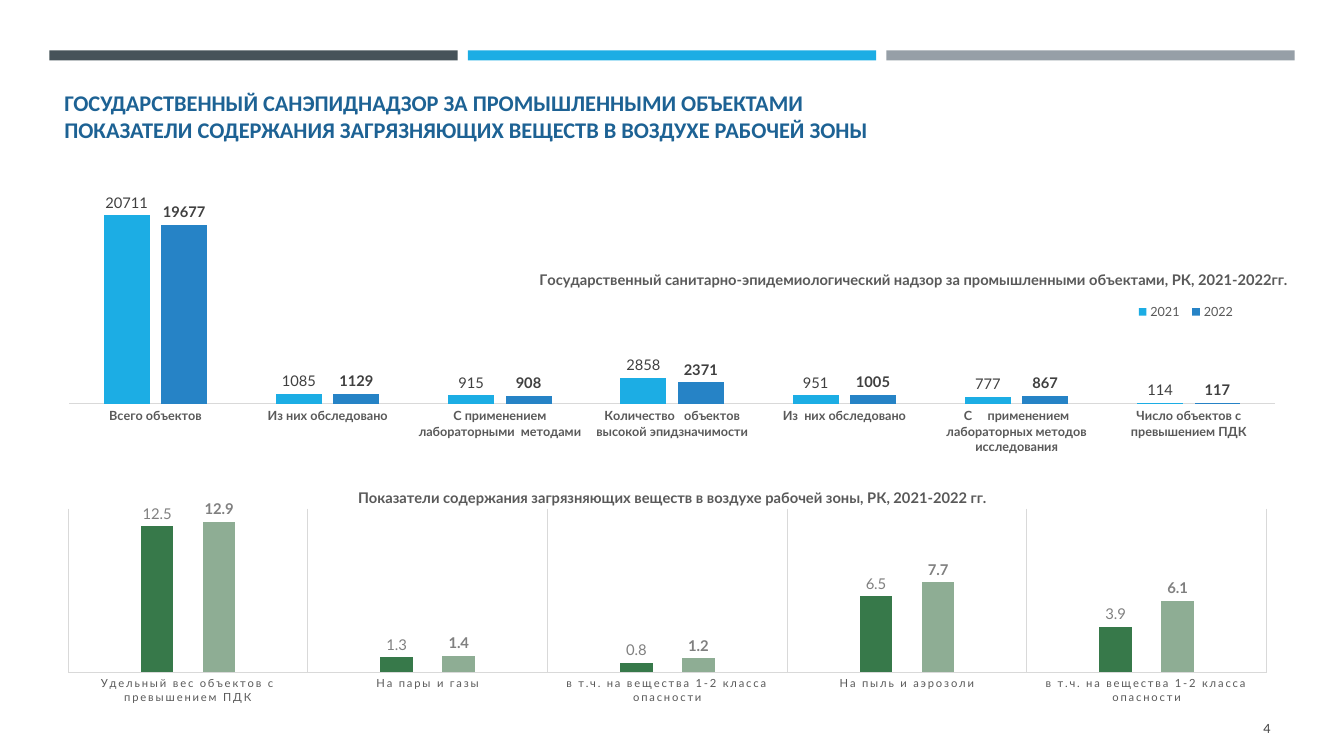
from lxml import etree
from pptx import Presentation
from pptx.chart.data import CategoryChartData
from pptx.dml.color import RGBColor
from pptx.enum import chart as ch, shapes, text
from pptx.oxml import parse_xml
from pptx.oxml.ns import nsdecls, qn
from pptx.util import Inches, Pt


def paint(target, color):
    target.fill.solid()
    target.fill.fore_color.rgb = RGBColor.from_string(color)


def style_font(font, size, color, bold=False, name="Lato"):
    font.size, font.bold, font.name = Pt(size), bold, name
    font.color.rgb = RGBColor.from_string(color)


def add_stripe(slide, left, color):
    stripe = slide.shapes.add_shape(shapes.MSO_SHAPE.RECTANGLE, Inches(left), Inches(0.5),
                                    Inches(4.05), Inches(0.1))
    stripe.shadow.inherit = False
    paint(stripe, color)
    stripe.line.fill.background()


def add_text(slide, lines, box, *, size, color, bold=False, name="Lato",
             align=text.PP_ALIGN.LEFT, anchor=text.MSO_ANCHOR.MIDDLE):
    frame = slide.shapes.add_textbox(*map(Inches, box)).text_frame
    frame.word_wrap = True
    frame.vertical_anchor = anchor
    paragraph = frame.paragraphs[0]
    paragraph.alignment = align
    for i, line in enumerate(lines):
        if i:
            paragraph.add_line_break()
        run = paragraph.add_run()
        run.text = line
        style_font(run.font, size, color, bold, name)


def make_layout(inner=False, **fractions):
    layout = parse_xml(f'<c:layout {nsdecls("c")}><c:manualLayout/></c:layout>')
    settings = {"layoutTarget": "inner"} if inner else {}
    settings |= {"xMode": "edge", "yMode": "edge"} | fractions
    for tag, value in settings.items():
        etree.SubElement(layout[0], qn(f"c:{tag}")).set("val", str(value))
    return layout


def place(element, layout, before):
    for old in element.findall(qn("c:layout")):
        element.remove(old)
    follower = next(child for child in element if child.tag in map(qn, before))
    follower.addprevious(layout)


def add_columns(slide, box, categories, series, *, title, title_at, plot, top, gap, overlap,
                colors, label_size, label_color, axis_size, axis_bold=False, fmt="General"):
    data = CategoryChartData(number_format=fmt)
    data.categories = categories
    for name, values in series.items():
        data.add_series(name, values)
    chart = slide.shapes.add_chart(ch.XL_CHART_TYPE.COLUMN_CLUSTERED,
                                   *map(Inches, box), data).chart
    style_font(chart.font, 10, "000000")
    chart.has_legend = False

    heading = chart.chart_title
    heading.include_in_layout = True
    run = heading.text_frame.paragraphs[0].add_run()
    run.text = title
    style_font(run.font, 10.5, "595959", True)
    place(heading._element, make_layout(x=title_at[0], y=title_at[1]), ["c:overlay"])
    place(chart._chartSpace.chart.plotArea,
          make_layout(True, **dict(zip("xywh", plot))), ["c:barChart"])

    columns = chart.plots[0]
    columns.vary_by_categories = False
    columns.gap_width, columns.overlap = gap, overlap
    for i, (column, color) in enumerate(zip(columns.series, colors)):
        paint(column.format, color)
        labels = column.data_labels
        labels.show_value = True
        labels.position = ch.XL_LABEL_POSITION.OUTSIDE_END
        labels.number_format, labels.number_format_is_linked = fmt, False
        style_font(labels.font, label_size, label_color, i == 1)

    chart.value_axis.visible = False
    chart.value_axis.has_major_gridlines = False
    chart.value_axis.minimum_scale, chart.value_axis.maximum_scale = 0, top
    axis = chart.category_axis
    axis.major_tick_mark = ch.XL_TICK_MARK.NONE
    style_font(axis.tick_labels.font, axis_size, "595959", axis_bold)
    set_line(axis.format.line)
    return chart


def set_line(line):
    line.color.rgb = RGBColor.from_string("D9D9D9")
    line.width = Pt(0.75)


def add_legend(chart, **position):
    chart.has_legend = True
    legend = chart.legend
    legend.position = ch.XL_LEGEND_POSITION.TOP
    legend.include_in_layout = False
    style_font(legend.font, 9, "595959")
    place(legend._element, make_layout(**position), ["c:overlay"])


def add_separators(chart):
    axis = chart.category_axis
    axis.has_major_gridlines = True
    set_line(axis.major_gridlines.format.line)
    properties = axis.tick_labels.font._element
    properties.set("spc", "120")


def main():
    deck = Presentation()
    deck.slide_width, deck.slide_height = Inches(13.33), Inches(7.5)
    slide = deck.slides.add_slide(deck.slide_layouts[6])

    for i, color in enumerate(["465359", "1CADE4", "969FA7"]):
        add_stripe(slide, 0.49 + i * 4.15, color)
    add_text(slide, ["ГОСУДАРСТВЕННЫЙ САНЭПИДНАДЗОР ЗА ПРОМЫШЛЕННЫМИ ОБЪЕКТАМИ",
                     "ПОКАЗАТЕЛИ СОДЕРЖАНИЯ ЗАГРЯЗНЯЮЩИХ ВЕЩЕСТВ В ВОЗДУХЕ РАБОЧЕЙ ЗОНЫ"],
             (0.54, 0.79, 12.06, 0.68), size=16, color="1D6294", bold=True, name="Calibri",
             anchor=text.MSO_ANCHOR.BOTTOM)
    add_text(slide, ["4"], (11.55, 7.03, 1.15, 0.4), size=9, color="404040",
             align=text.PP_ALIGN.RIGHT)

    supervision = add_columns(
        slide, (0.54, 1.53, 12.27, 3.1),
        ["Всего объектов", "Из них обследовано", "С применением лабораторными  методами",
         "Количество   объектов высокой эпидзначимости", "Из  них обследовано",
         "С     применением лабораторных методов исследования",
         "Число объектов с превышением ПДК"],
        {"2021": [20711, 1085, 915, 2858, 951, 777, 114],
         "2022": [19677, 1129, 908, 2371, 1005, 867, 117]},
        title="Государственный санитарно-эпидемиологический надзор "
              "за промышленными объектами, РК, 2021-2022гг.",
        title_at=(0.39, 0.36), plot=(0.012, 0.071, 0.975, 0.728), top=25000,
        gap=150, overlap=-25, colors=["1CADE4", "2683C6"],
        label_size=10.5, label_color="404040", axis_size=9, axis_bold=True)
    add_legend(supervision, x=0.87, y=0.46, w=0.09, h=0.09)

    pollutants = add_columns(
        slide, (0.43, 4.64, 12.38, 2.39),
        ["Удельный вес объектов с превышением ПДК", "На пары и газы",
         "в т.ч. на вещества 1-2 класса опасности", "На пыль и аэрозоли",
         "в т.ч. на вещества 1-2 класса опасности"],
        {"Series 1": [12.5, 1.3, 0.8, 6.5, 3.9], "Series 2": [12.9, 1.4, 1.2, 7.7, 6.1]},
        title="Показатели содержания загрязняющих веществ в воздухе рабочей зоны, "
              "РК, 2021-2022 гг.",
        title_at=(0.25, 0.07), plot=(0.02, 0.17, 0.96, 0.68), top=14,
        gap=444, overlap=-90, colors=["37794A", "8EAD94"],
        label_size=10.6, label_color="808080", axis_size=8, fmt="0.0")
    add_separators(pollutants)

    deck.save("out.pptx")


if __name__ == "__main__":
    main()
